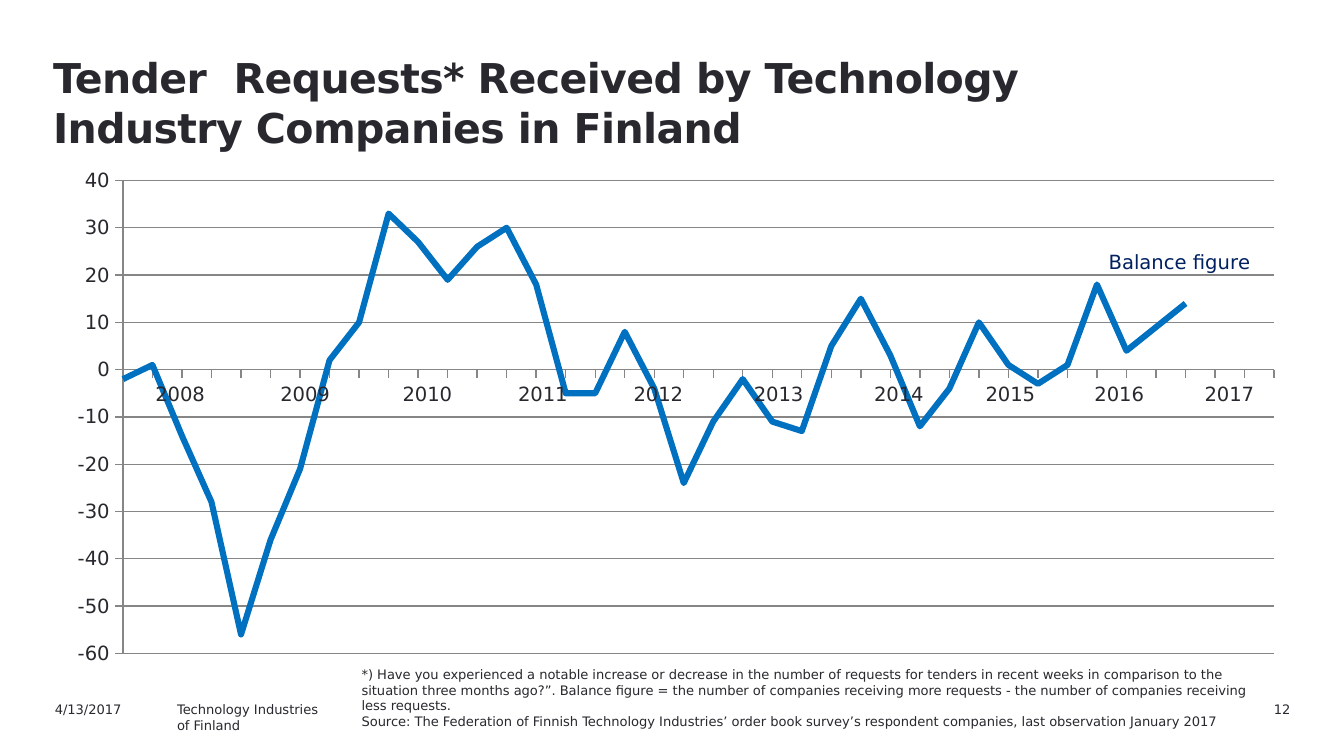
import pptx
import pptx.chart.data
import pptx.dml.color
import pptx.enum.chart
import pptx.enum.text
import pptx.oxml
import pptx.oxml.ns
import pptx.util

Pt = pptx.util.Pt
ALIGN = pptx.enum.text.PP_ALIGN
INK = pptx.dml.color.RGBColor(0x29, 0x28, 0x2E)
NAVY = pptx.dml.color.RGBColor(0x00, 0x20, 0x60)
BLUE = pptx.dml.color.RGBColor(0x00, 0x70, 0xC0)
GRAY = pptx.dml.color.RGBColor(0x86, 0x86, 0x86)
FONT = "DejaVu Sans"
NO_STYLE = "{2D5ABB26-0587-4C30-8999-92F81FD0307C}"

# Content
TITLE = "Tender  Requests* Received by Technology Industry Companies in Finland"
NOTES = [
    "*) Have you experienced a notable increase or decrease in the number of requests "
    "for tenders in recent weeks in comparison to the situation three months ago?”. "
    "Balance figure = the number of companies receiving more requests - the number of "
    "companies receiving less requests.",
    "Source: The Federation of Finnish Technology Industries’ order book survey’s "
    "respondent companies, last observation January 2017",
]
SERIES = "Balance figure"
BALANCE = [
    -2, 1, -14, -28, -56, -36, -21, 2, 10, 33,
    27, 19, 26, 30, 18, -5, -5, 8, -4, -24,
    -11, -2, -11, -13, 5, 15, 3, -12, -4, 10,
    1, -3, 1, 18, 4, 9, 14, None, None, None,
]
FIRST_YEAR = 2008
YEAR_WIDTHS = [64.8, 69.1, 61.9, 61.9, 61.9, 67, 61.9, 57.6, 59, 59]
# Footer: lines, left, width, alignment
FOOTER = [
    (["4/13/2017"], 22.3, 72, ALIGN.LEFT),
    (["Technology Industries", "of Finland"], 87.8, 124.6, ALIGN.LEFT),
    (["12"], 630.7, 67.7, ALIGN.RIGHT),
]
FOOTER_TOP, FOOTER_HEIGHT = 372.2, 13


def set_all(target, **values):
    for name, value in values.items():
        setattr(target, name, value)


def style(font, size, color=INK, bold=False):
    set_all(font, name=FONT, size=Pt(size), bold=bold)
    font.color.rgb = color


def place(shape, left, top, width, height):
    set_all(shape, left=Pt(left), top=Pt(top), width=Pt(width), height=Pt(height))


def write(frame, lines, size, align=ALIGN.LEFT, bold=False):
    set_all(frame, word_wrap=True, auto_size=pptx.enum.text.MSO_AUTO_SIZE.NONE,
            vertical_anchor=pptx.enum.text.MSO_ANCHOR.TOP)
    for number, line in enumerate(lines):
        para = frame.paragraphs[0] if number == 0 else frame.add_paragraph()
        set_all(para, alignment=align, space_before=Pt(0))
        span = para.add_run()
        span.text = line
        style(span.font, size, bold=bold)


def set_layout(holder, index, inner=False, **fractions):
    """Give a chart part a fixed place, as fractions of the chart."""
    old = holder.find(pptx.oxml.ns.qn("c:layout"))
    if old is not None:
        holder.remove(old)
    target = '<c:layoutTarget val="inner"/>' if inner else ""
    modes = "".join(f'<c:{key}Mode val="edge"/>' for key in "xy")
    sizes = "".join(f'<c:{key} val="{value}"/>' for key, value in fractions.items())
    holder.insert(index, pptx.oxml.parse_xml(
        f'<c:layout {pptx.oxml.ns.nsdecls("c")}><c:manualLayout>'
        f"{target}{modes}{sizes}</c:manualLayout></c:layout>"))


deck = pptx.Presentation()
set_all(deck, slide_width=Pt(720), slide_height=Pt(405))
page = deck.slides.add_slide(deck.slide_layouts[1])

# Title
title = page.shapes.title
place(title, 20.2, 22.3, 629.3, 51.1)
write(title.text_frame, [TITLE], 22, bold=True)
set_all(title.text_frame, margin_left=Pt(8.2), margin_top=Pt(5))
heading = title.text_frame.paragraphs[0]
heading.line_spacing = Pt(27)
heading.runs[0].font._element.set("spc", "-30")

# Footnote
note = page.placeholders[1]
place(note, 186.5, 353.5, 494.6, 31)
write(note.text_frame, NOTES, 7)
for para in note.text_frame.paragraphs:
    properties = para._p.get_or_add_pPr()
    properties.set("marL", "0")
    properties.set("indent", "0")
    properties.append(pptx.oxml.parse_xml(f'<a:buNone {pptx.oxml.ns.nsdecls("a")}/>'))

# Line chart
data = pptx.chart.data.CategoryChartData()
data.categories = [str(number) for number in range(1, len(BALANCE) + 1)]
data.add_series(SERIES, BALANCE)
chart = page.shapes.add_chart(
    pptx.enum.chart.XL_CHART_TYPE.LINE, Pt(30.2), Pt(85), Pt(661), Pt(272.2), data).chart
chart.has_legend = False
style(chart.font, 10.5)
set_layout(chart._chartSpace.chart.plotArea, 0, inner=True, x=0.054, y=0.043, w=0.933, h=0.931)

chart.has_title = True
caption = chart.chart_title.text_frame.paragraphs[0].add_run()
caption.text = SERIES
style(caption.font, 10.5, NAVY)
set_layout(chart.chart_title._element, 1, x=0.85, y=0.17)

line = chart.plots[0].series[0]
line.smooth = False
line.marker.style = pptx.enum.chart.XL_MARKER_STYLE.NONE
line.format.line.color.rgb = BLUE
line.format.line.width = Pt(3.25)

value_axis, category_axis = chart.value_axis, chart.category_axis
set_all(value_axis, minimum_scale=-60, maximum_scale=40, major_unit=10,
        has_major_gridlines=True)
style(value_axis.tick_labels.font, 10.5)
category_axis.tick_label_position = pptx.enum.chart.XL_TICK_LABEL_POSITION.NONE
for axis in (value_axis, category_axis):
    axis.major_tick_mark = pptx.enum.chart.XL_TICK_MARK.OUTSIDE
    axis.minor_tick_mark = pptx.enum.chart.XL_TICK_MARK.NONE
for part in (value_axis, category_axis, value_axis.major_gridlines):
    part.format.line.color.rgb = GRAY
    part.format.line.width = Pt(0.75)

# Points sit on the tick marks
axis_element = value_axis._element
crossing = axis_element.find(pptx.oxml.ns.qn("c:crossBetween"))
if crossing is None:
    crossing = pptx.oxml.parse_xml(f'<c:crossBetween {pptx.oxml.ns.nsdecls("c")}/>')
    axis_element.find(pptx.oxml.ns.qn("c:majorUnit")).addprevious(crossing)
crossing.set("val", "midCat")

# Year labels
years = page.shapes.add_table(
    1, len(YEAR_WIDTHS), Pt(64.1), Pt(202.3), Pt(sum(YEAR_WIDTHS)), Pt(20.9)).table
set_all(years, first_row=False, horz_banding=False)
years._tbl.tblPr.find(pptx.oxml.ns.qn("a:tableStyleId")).text = NO_STYLE
for number, width in enumerate(YEAR_WIDTHS):
    years.columns[number].width = Pt(width)
    cell = years.cell(0, number)
    cell.fill.background()
    set_all(cell, margin_left=Pt(6.5), margin_right=Pt(6.5),
            margin_top=Pt(2.9), margin_bottom=Pt(2.9))
    para = cell.text_frame.paragraphs[0]
    para.alignment = ALIGN.CENTER
    span = para.add_run()
    span.text = str(FIRST_YEAR + number)
    style(span.font, 10.5)

# Footer
for lines, left, width, align in FOOTER:
    box = page.shapes.add_textbox(Pt(left), Pt(FOOTER_TOP), Pt(width), Pt(FOOTER_HEIGHT))
    write(box.text_frame, lines, 7, align)

deck.save("out.pptx")
